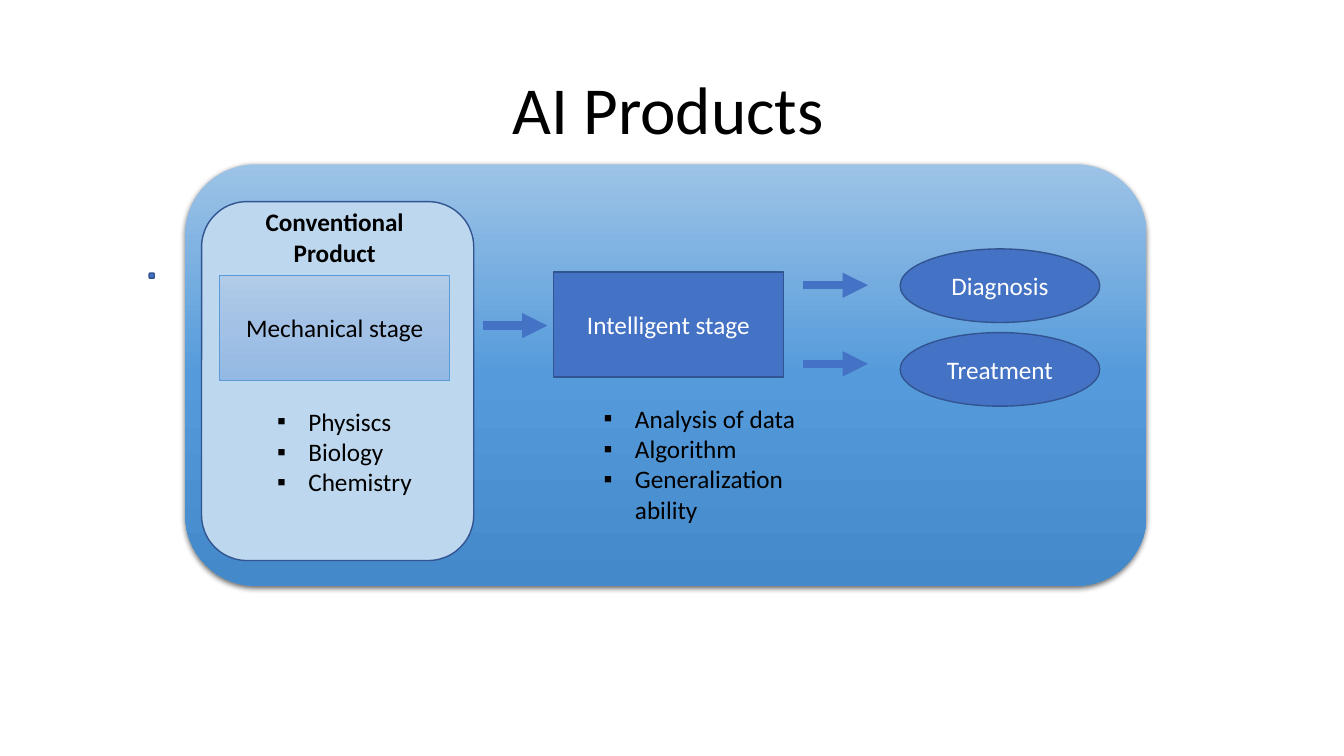
from copy import deepcopy
from dataclasses import dataclass

from lxml.etree import SubElement
from pptx import Presentation
from pptx.dml.color import RGBColor
from pptx.enum.shapes import MSO_CONNECTOR, MSO_SHAPE
from pptx.enum.text import MSO_ANCHOR, MSO_AUTO_SIZE, PP_ALIGN
from pptx.oxml.ns import qn
from pptx.util import Inches, Pt

TITLE = ("AI Products", (27.9, 9.47, 43.65, 11.07))
PANEL = (13.8, 21.73, 71.5, 55.73)
CARD = (15, 26.67, 20.25, 47.47)
HEAD = ("Conventional Product", (17.85, 26.67, 14.1, 9.47))
DOT = (11.1, 36.13, 0.38, 0.67)
STAGES = [
    ("Mechanical stage", 16.35, 36.4, 19.88, 13.47,
     ["Physiscs", "Biology", "Chemistry"]),
    ("Intelligent stage", 41.18, 36, 44.18, 17.47,
     ["Analysis of data", "Algorithm", "Generalization ability"]),
]
STAGE_W, STAGE_H = 17.1, 13.87
LIST_DROP, LIST_W = 16.67, 15.98
RESULTS = ["Diagnosis", "Treatment"]
OVAL = (66.98, 32.93, 14.85, 9.73)
OVAL_STEP = 11.07
ARROWS = [(35.93, 43.07), (59.78, 37.73), (59.78, 48.13)]
ARROW_W = 4.8


@dataclass(frozen=True)
class Theme:
    font: str = "Calibri"
    title: int = 48
    body: int = 18
    dark: str = "000000"
    light: str = "FFFFFF"
    blue: str = "4472C4"
    edge: str = "325491"
    card: str = "BDD7EE"
    rim: str = "5B9BD5"
    deep: tuple = ("9DC3E6", "559BDB", "448ACA")
    pale: tuple = ("B1CBE9", "A3C1E5", "93B9E4")


LOOK = Theme()
deck = Presentation()
deck.slide_width, deck.slide_height = Inches(13.33), Inches(7.5)
COL, ROW = deck.slide_width / 100, deck.slide_height / 100
slide = deck.slides.add_slide(deck.slide_layouts[5])
shapes = slide.shapes


def place(box):
    x, y, w, h = box
    return round(x * COL), round(y * ROW), round(w * COL), round(h * ROW)


def paint(fill, tone):
    fill.solid()
    fill.fore_color.rgb = RGBColor.from_string(tone)


def blend(shape, tones):
    fill = shape.fill
    fill.gradient()
    fill.gradient_angle = 270
    stops = shape._element.spPr.find(".//" + qn("a:gsLst"))
    stops.insert(1, deepcopy(stops[0]))
    for num, (stop, tone) in enumerate(zip(fill.gradient_stops, tones)):
        stop.color.rgb = RGBColor.from_string(tone)
        stop.position = num / 2


def write(frame, lines, tone=LOOK.dark, size=LOOK.body, bold=False,
          align=PP_ALIGN.CENTER, mark=False):
    frame.word_wrap = True
    for num, line in enumerate(lines):
        para = frame.add_paragraph() if num else frame.paragraphs[0]
        para.alignment = align
        if mark:
            props = para._p.get_or_add_pPr()
            props.set("marL", str(Inches(0.31)))
            props.set("indent", str(-Inches(0.31)))
            SubElement(props, qn("a:buFont"), typeface="Arial")
            SubElement(props, qn("a:buChar"), char="▪")
        run = para.add_run()
        run.text = line
        font = run.font
        font.name, font.size, font.bold = LOOK.font, Pt(size), bold
        font.color.rgb = RGBColor.from_string(tone)


def draw(kind, box, fill, edge=None, width=1, text=None, tone=LOOK.light):
    shape = shapes.add_shape(kind, *place(box))
    if isinstance(fill, tuple):
        blend(shape, fill)
    else:
        paint(shape.fill, fill)
    if edge:
        paint(shape.line.fill, edge)
        shape.line.width = Pt(width)
    else:
        shape.line.fill.background()
    shape.shadow.inherit = False
    if text:
        shape.text_frame.vertical_anchor = MSO_ANCHOR.MIDDLE
        write(shape.text_frame, [text], tone)
    return shape


def label(box, lines, **style):
    write(shapes.add_textbox(*place(box)).text_frame, lines, **style)


def shade(shape):
    glow = SubElement(shape._element.spPr.find(qn("a:effectLst")),
                      qn("a:outerShdw"), blurRad=str(Pt(4.5)),
                      dist=str(Pt(1.5)), dir="5400000", algn="ctr",
                      rotWithShape="0")
    black = SubElement(glow, qn("a:srgbClr"), val=LOOK.dark)
    SubElement(black, qn("a:alpha"), val="63000")


def point(x, y):
    left, top, wide, _ = place((x, y, ARROW_W, 0))
    arrow = shapes.add_connector(MSO_CONNECTOR.STRAIGHT,
                                 left, top, left + wide, top)
    paint(arrow.line.fill, LOOK.blue)
    arrow.line.width = Pt(6)
    props = arrow._element.spPr
    SubElement(props.find(qn("a:ln")), qn("a:tailEnd"), type="triangle")
    SubElement(props, qn("a:effectLst"))


def main():
    name, box = TITLE
    title = shapes.title
    title.left, title.top, title.width, title.height = place(box)
    frame = title.text_frame
    frame.auto_size = MSO_AUTO_SIZE.NONE
    frame.vertical_anchor = MSO_ANCHOR.TOP
    write(frame, [name], size=LOOK.title)
    frame.paragraphs[0].line_spacing = 0.9
    frame.paragraphs[0].space_after = Pt(6)

    shade(draw(MSO_SHAPE.ROUNDED_RECTANGLE, PANEL, LOOK.deep))
    draw(MSO_SHAPE.ROUNDED_RECTANGLE, CARD, LOOK.card, LOOK.edge)
    label(HEAD[1], [HEAD[0]], bold=True)

    styles = [(LOOK.pale, LOOK.rim, 0.5, LOOK.dark),
              (LOOK.blue, LOOK.edge, 1, LOOK.light)]
    for stage, style in zip(STAGES, styles):
        name, x, y, list_x, list_h, items = stage
        fill, edge, width, tone = style
        draw(MSO_SHAPE.RECTANGLE, (x, y, STAGE_W, STAGE_H),
             fill, edge, width, name, tone)
        label((list_x, y + LIST_DROP, LIST_W, list_h), items,
              align=PP_ALIGN.LEFT, mark=True)

    draw(MSO_SHAPE.ROUNDED_RECTANGLE, DOT, LOOK.blue, LOOK.edge)
    for x, y in ARROWS:
        point(x, y)
    x, y, w, h = OVAL
    for num, name in enumerate(RESULTS):
        draw(MSO_SHAPE.OVAL, (x, y + num * OVAL_STEP, w, h),
             LOOK.blue, LOOK.edge, text=name)
    deck.save("out.pptx")


if __name__ == "__main__":
    main()
